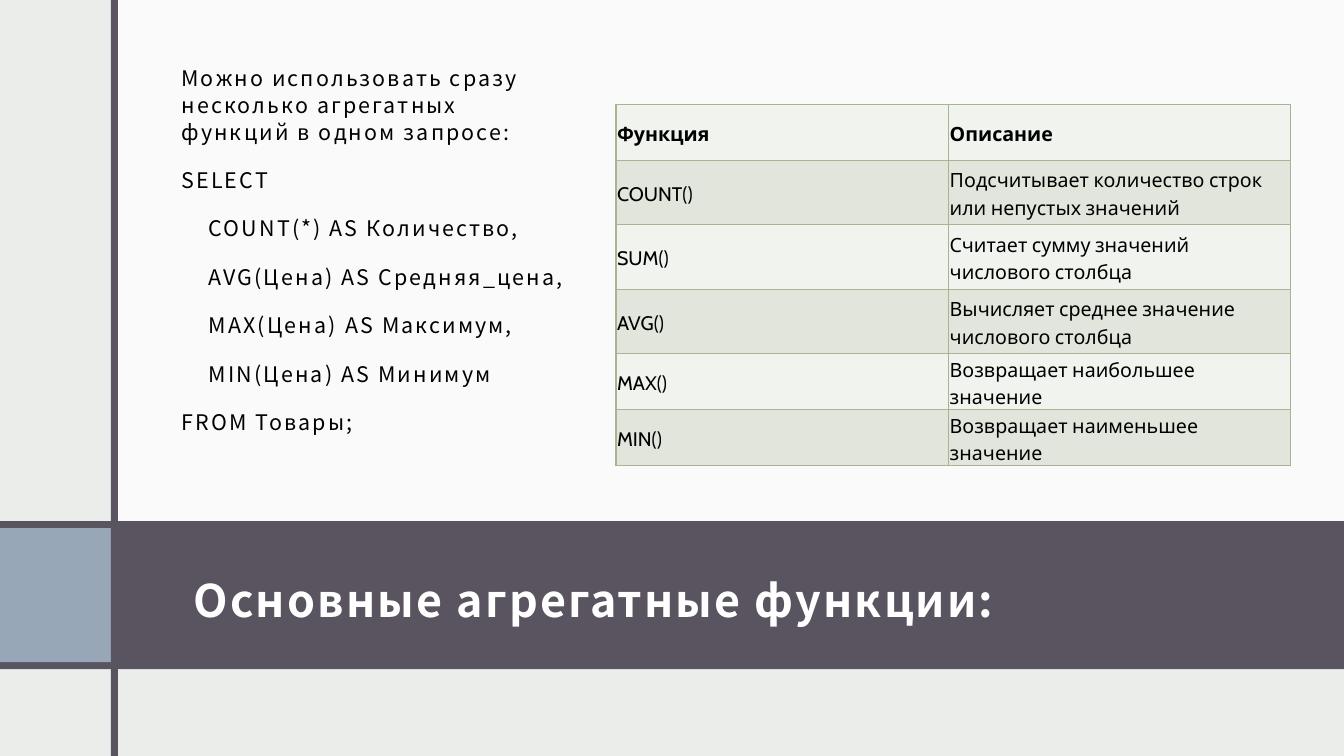
from lxml import etree
from pptx import Presentation
from pptx.dml.color import RGBColor
from pptx.enum.shapes import MSO_SHAPE
from pptx.enum.text import MSO_ANCHOR
from pptx.oxml.ns import qn
from pptx.util import Inches, Pt

RECTANGLE = MSO_SHAPE.RECTANGLE
TOP, MIDDLE = MSO_ANCHOR.TOP, MSO_ANCHOR.MIDDLE

COLORS = {
    "background": "EBEDEB", "white": "FFFFFF", "black": "000000",
    "plum": "595460", "blue": "97A7B8",
    "row_light": "F0F3EE", "row_dark": "E1E5DC", "border": "A5B592",
}
TEXT_FONT, TABLE_FONT = "Noto Sans CJK JP", "Cabin"

QUERY_INTRO = "Можно использовать сразу несколько агрегатных функций в одном запросе:"
# Each line of the query with its indent in inches
QUERY_LINES = [
    (QUERY_INTRO, 0),
    ("SELECT", 0),
    ("COUNT(*) AS Количество,", 0.27),
    ("AVG(Цена) AS Средняя_цена,", 0.27),
    ("MAX(Цена) AS Максимум,", 0.27),
    ("MIN(Цена) AS Минимум", 0.27),
    ("FROM Товары;", 0),
]
FUNCTION_ROWS = [
    ("Функция", "Описание"),
    ("COUNT()", "Подсчитывает количество строк или непустых значений"),
    ("SUM()", "Считает сумму значений числового столбца"),
    ("AVG()", "Вычисляет среднее значение числового столбца"),
    ("MAX()", "Возвращает наибольшее значение"),
    ("MIN()", "Возвращает наименьшее значение"),
]


class SlideBuilder:
    def __init__(self, slide):
        self.slide = slide
        self.paint(slide.background.fill, "background")

    def paint(self, fill, color):
        fill.solid()
        fill.fore_color.rgb = RGBColor.from_string(COLORS[color])

    def style(self, font, name, size, color, bold=False):
        font.name, font.size, font.bold = name, Pt(size), bold
        font.color.rgb = RGBColor.from_string(COLORS[color])

    def panel(self, left, top, width, height, color, opacity=100):
        shape = self.slide.shapes.add_shape(
            RECTANGLE, Inches(left), Inches(top), Inches(width), Inches(height))
        shape.shadow.inherit = False
        shape.line.fill.background()
        self.paint(shape.fill, color)
        if opacity < 100:
            tint = shape.fill._xPr.find(qn("a:solidFill"))[0]
            etree.SubElement(tint, qn("a:alpha"), val=str(opacity * 1000))

    def text(self, box, lines, size, color, insets, anchor=TOP, bold=False,
             line_spacing=1.0, before=0, after=0):
        frame = self.slide.shapes.add_textbox(*map(Inches, box)).text_frame
        frame.word_wrap = True
        frame.vertical_anchor = anchor
        (frame.margin_left, frame.margin_top,
         frame.margin_right, frame.margin_bottom) = map(Inches, insets)
        for index, (line, indent) in enumerate(lines):
            paragraph = frame.add_paragraph() if index else frame.paragraphs[0]
            run = paragraph.add_run()
            run.text = line
            run.font._element.set("spc", "150")
            paragraph.line_spacing = line_spacing
            paragraph.space_before = Pt(before if index else 0)
            paragraph.space_after = Pt(after)
            if indent:
                paragraph._p.get_or_add_pPr().set("marL", str(Inches(indent)))
            self.style(paragraph.font, TEXT_FONT, size, color, bold)

    def border(self, cell):
        properties = cell._tc.get_or_add_tcPr()
        for position, side in enumerate(("lnL", "lnR", "lnT", "lnB")):
            line = etree.Element(qn(f"a:{side}"), w=str(Pt(1)))
            fill = etree.SubElement(line, qn("a:solidFill"))
            etree.SubElement(fill, qn("a:srgbClr"), val=COLORS["border"])
            properties.insert(position, line)

    def table(self, left, top, widths, heights, rows):
        table = self.slide.shapes.add_table(
            len(rows), len(widths), Inches(left), Inches(top),
            Inches(sum(widths)), Inches(sum(heights))).table
        for column, width in zip(table.columns, widths):
            column.width = Inches(width)
        for index, (values, height) in enumerate(zip(rows, heights)):
            table.rows[index].height = Inches(height)
            for cell, value in zip(table.rows[index].cells, values):
                cell.text = value
                cell.vertical_anchor = MIDDLE
                cell.margin_left = cell.margin_right = Inches(0.01)
                cell.margin_top = cell.margin_bottom = Inches(0.01)
                self.paint(cell.fill, "row_dark" if index % 2 else "row_light")
                self.border(cell)
                paragraph = cell.text_frame.paragraphs[0]
                paragraph.line_spacing = 1.15
                paragraph.space_after = Pt(8)
                self.style(paragraph.font, TABLE_FONT, 14, "black", index == 0)


def main():
    presentation = Presentation()
    presentation.slide_width = Inches(13.33)
    presentation.slide_height = Inches(7.5)
    builder = SlideBuilder(
        presentation.slides.add_slide(presentation.slide_layouts[6]))

    # Backdrop: content area, title band, accent block, vertical rule
    builder.panel(1.14, 0, 12.19, 5.17, "white", opacity=75)
    builder.panel(0, 5.17, 13.33, 1.47, "plum")
    builder.panel(0, 5.24, 1.1, 1.33, "blue")
    builder.panel(1.1, 0, 0.07, 7.5, "plum")

    # Title
    builder.text((1.68, 5.33, 10.95, 1.13), [("Основные агрегатные функции:", 0)],
                 32, "white", (0.24, 0.2, 0.12, 0.1), MIDDLE, bold=True)

    # Sample query
    builder.text((1.68, 0.51, 4.04, 4.23), QUERY_LINES, 15.3, "black",
                 (0.12, 0.12, 0.12, 0.1), line_spacing=1.05, before=9.3, after=6)

    # Function reference
    builder.table(6.11, 1.04, (3.3, 3.39), (0.55, 0.64, 0.64, 0.64, 0.55, 0.55),
                  FUNCTION_ROWS)

    presentation.save("out.pptx")


if __name__ == "__main__":
    main()
